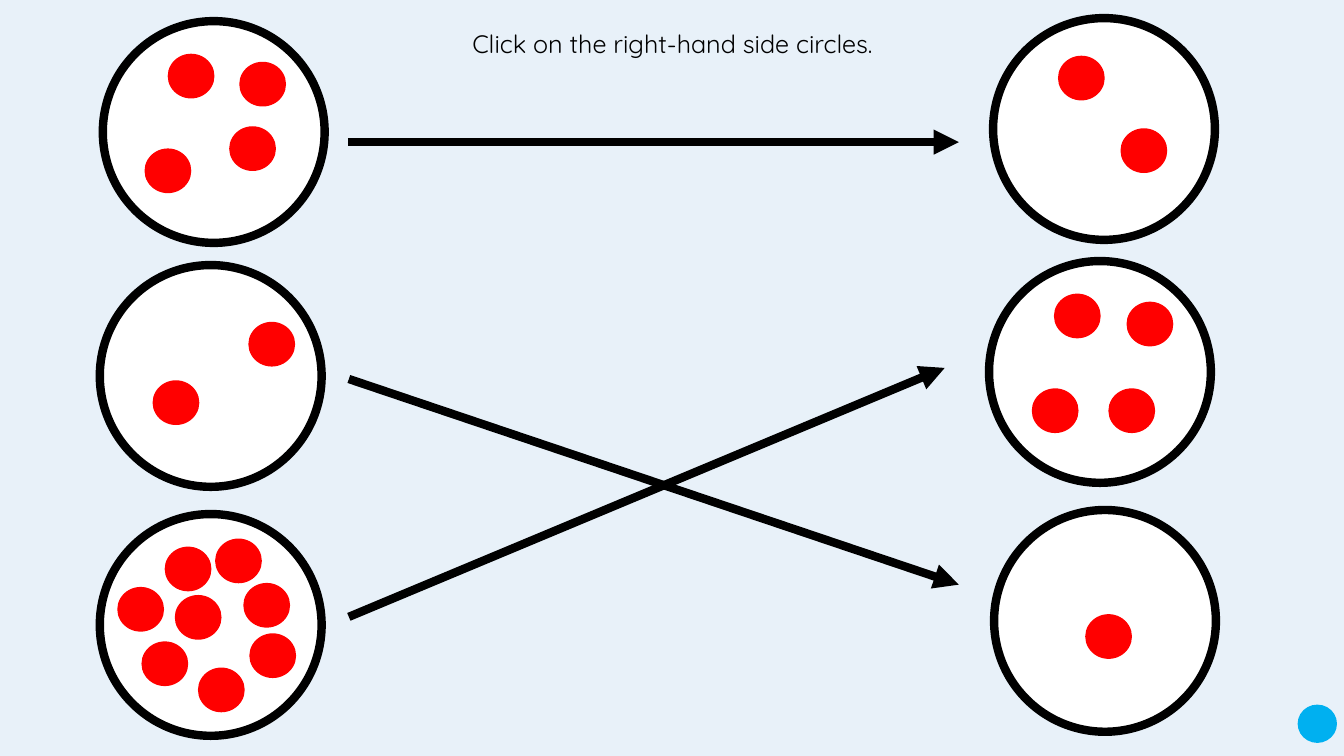
from dataclasses import dataclass

from lxml import etree
from pptx import Presentation
from pptx.dml.color import RGBColor
from pptx.enum.shapes import MSO_CONNECTOR, MSO_SHAPE
from pptx.enum.text import MSO_AUTO_SIZE, PP_ALIGN
from pptx.oxml.ns import qn
from pptx.shapes.autoshape import Shape
from pptx.shapes.connector import Connector
from pptx.shapes.shapetree import SlideShapes
from pptx.util import Inches, Pt

OVAL = MSO_SHAPE.OVAL
STRAIGHT = MSO_CONNECTOR.STRAIGHT
CENTER = PP_ALIGN.CENTER
GROW = MSO_AUTO_SIZE.SHAPE_TO_FIT_TEXT

BLACK = RGBColor(0x00, 0x00, 0x00)
WHITE = RGBColor(0xFF, 0xFF, 0xFF)
RED = RGBColor(0xFF, 0x00, 0x00)
SKY = RGBColor(0x00, 0xB0, 0xF0)
PALE_BLUE = RGBColor(0xE8, 0xF1, 0xF9)

FONT = "Quicksand"
RING_SIZE = 2.2
DOT_WIDTH, DOT_HEIGHT = 0.45, 0.43
HEAVY = 6

Point = tuple[float, float]


@dataclass(frozen=True)
class DotCircle:
    left: float
    top: float
    dots: tuple[Point, ...]


@dataclass(frozen=True)
class Match:
    start: Point
    end: Point


CIRCLES = (
    DotCircle(9.85, 0.18, ((10.5, 0.56), (11.12, 1.28))),
    DotCircle(9.81, 2.59, ((10.46, 2.92), (11, 3.86), (10.24, 3.86), (11.18, 3))),
    DotCircle(9.86, 5.06, ((10.77, 6.1),)),
    DotCircle(0.99, 2.63, ((2.47, 3.2), (1.52, 3.78))),
    DotCircle(1.02, 0.21, ((1.67, 0.54), (2.28, 1.26), (1.44, 1.48), (2.38, 0.62))),
    DotCircle(0.99, 5.1, ((1.64, 5.43), (2.48, 6.29), (1.41, 6.37), (2.14, 5.35),
                          (1.17, 5.83), (1.97, 6.63), (1.74, 5.91), (2.42, 5.79))),
)

MATCHES = (
    Match((3.45, 1.41), (9.51, 1.41)),
    Match((3.46, 3.76), (9.51, 5.8)),
    Match((3.46, 6.12), (9.37, 3.65)),
)


def add_oval(shapes, left: float, top: float, width: float, height: float,
             fill: RGBColor, line: RGBColor | None = None, weight: float = 1) -> Shape:
    oval = shapes.add_shape(OVAL, Inches(left), Inches(top), Inches(width), Inches(height))
    oval.shadow.inherit = False
    oval.fill.solid()
    oval.fill.fore_color.rgb = fill
    if line is None:
        oval.line.fill.background()
    else:
        oval.line.color.rgb = line
        oval.line.width = Pt(weight)
    return oval


def add_dot_circle(shapes: SlideShapes, circle: DotCircle) -> None:
    members = shapes.add_group_shape().shapes
    add_oval(members, circle.left, circle.top, RING_SIZE, RING_SIZE, WHITE, BLACK, HEAVY)
    for left, top in circle.dots:
        add_oval(members, left, top, DOT_WIDTH, DOT_HEIGHT, RED, RED)


def add_arrow(shapes: SlideShapes, match: Match) -> Connector:
    ends = [Inches(value) for value in (*match.start, *match.end)]
    arrow = shapes.add_connector(STRAIGHT, *ends)
    arrow.line.color.rgb = BLACK
    arrow.line.width = Pt(HEAVY)
    etree.SubElement(arrow.line._get_or_add_ln(), qn("a:tailEnd"), type="triangle")
    etree.SubElement(arrow._element.spPr, qn("a:effectLst"))
    return arrow


def add_text(shapes: SlideShapes, text: str, *, left: float, top: float, width: float,
             height: float, size: float, color: RGBColor, align: PP_ALIGN) -> Shape:
    box = shapes.add_textbox(Inches(left), Inches(top), Inches(width), Inches(height))
    box.text_frame.word_wrap = True
    box.text_frame.auto_size = GROW
    paragraph = box.text_frame.paragraphs[0]
    paragraph.alignment = align
    run = paragraph.add_run()
    run.text = text
    run.font.name = FONT
    run.font.size = Pt(size)
    run.font.color.rgb = color
    return box


def main() -> None:
    presentation = Presentation()
    presentation.slide_width = Inches(13.33)
    presentation.slide_height = Inches(7.5)
    slide = presentation.slides.add_slide(presentation.slide_layouts[6])
    slide.background.fill.solid()
    slide.background.fill.fore_color.rgb = PALE_BLUE

    add_oval(slide.shapes, 12.87, 6.99, 0.39, 0.38, SKY)
    for circle in CIRCLES:
        add_dot_circle(slide.shapes, circle)
    for match in MATCHES:
        add_arrow(slide.shapes, match)
    add_text(slide.shapes, "Click on the right-hand side circles.", left=4.36, top=0.23,
             width=4.62, height=0.4, size=18, color=BLACK, align=CENTER)

    presentation.save("out.pptx")


if __name__ == "__main__":
    main()
